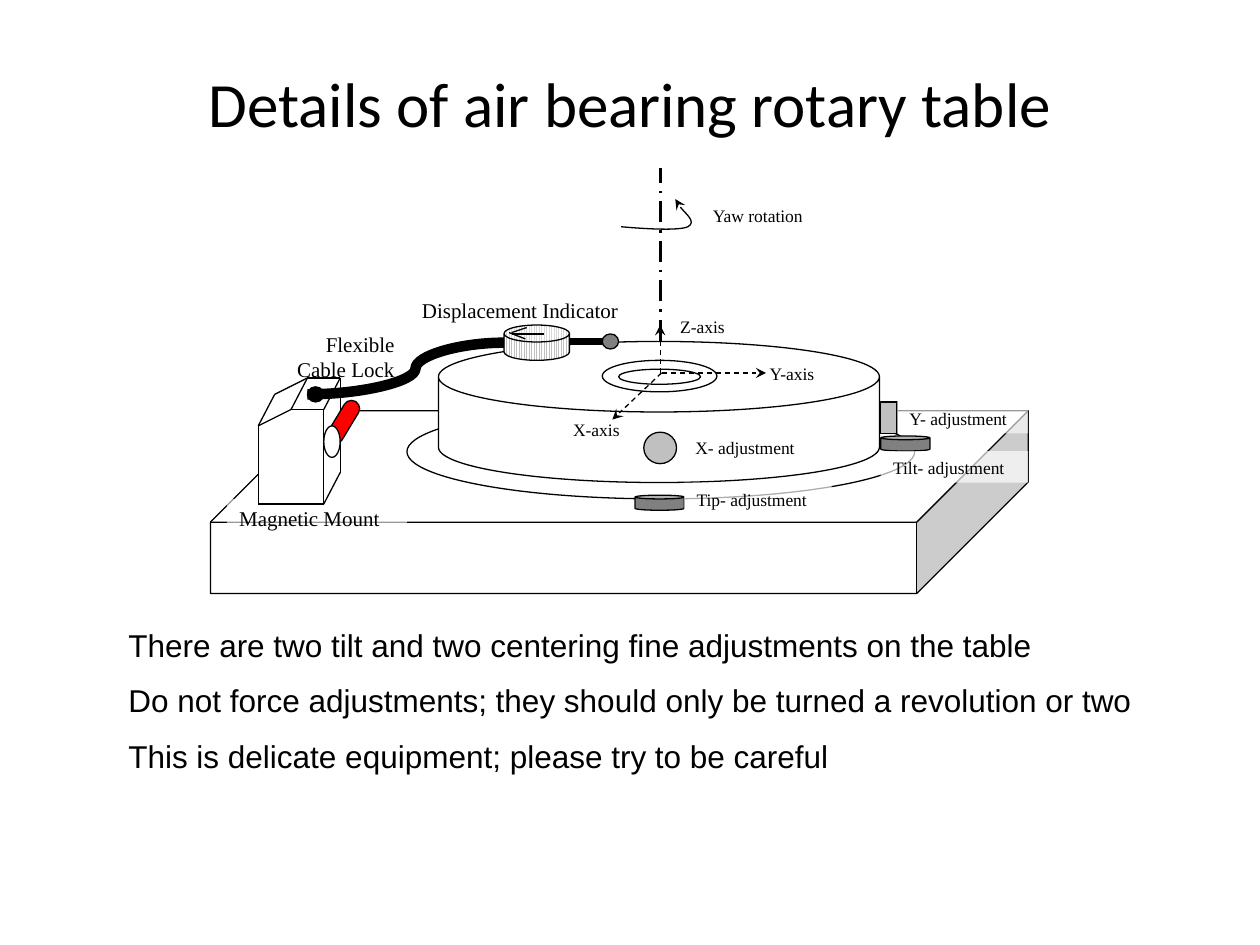
from itertools import pairwise
from lxml.etree import SubElement
from pptx import Presentation
from pptx.dml.color import RGBColor
from pptx.enum.dml import MSO_LINE, MSO_PATTERN
from pptx.enum.shapes import MSO_CONNECTOR, MSO_SHAPE
from pptx.enum.text import MSO_ANCHOR, PP_ALIGN
from pptx.oxml.ns import qn
from pptx.util import Inches, Pt

TITLE = "Details of air bearing rotary table"
NOTES = [
    "There are two tilt and two centering fine adjustments on the table",
    "Do not force adjustments; they should only be turned a revolution or two",
    "This is delicate equipment; please try to be careful",
]
BLACK, WHITE, SILVER, GRAY, RED = "000000", "FFFFFF", "C0C0C0", "808080", "FF0000"
CAN, OVAL, BOX = MSO_SHAPE.CAN, MSO_SHAPE.OVAL, MSO_SHAPE.RECTANGLE
AXIS = {"dash": MSO_LINE.DASH, "arrow": True}
CENTER = (5.25, 2.96)

TABLE = [
    ("line", [(5.24, 3.33), (5.24, 1.33)], {"weight": 1.5, "dash": MSO_LINE.LONG_DASH_DOT}),
    ("shape", MSO_SHAPE.CUBE, (1.67, 3.26, 6.49, 1.45), WHITE, {"adjustment": 0.61}),
    ("shape", OVAL, (3.23, 3.21, 4.03, 0.75), WHITE, {}),
    ("curve", [(4.93, 1.8), (5.16, 1.82), (5.39, 1.83), (5.46, 1.8),
               (5.53, 1.76), (5.36, 1.62), (5.36, 1.58)], {"arrow": True}),
    ("shape", CAN, (3.48, 2.71, 3.5, 1.12), WHITE, {"adjustment": 0.5}),
    ("shape", OVAL, (5.11, 3.43, 0.26, 0.25), SILVER, {}),
    ("label", "X- adjustment", (5.42, 3.42, 1.05, 0.25), {}),
    ("shape", BOX, (6.99, 3.19, 0.13, 0.25), SILVER, {}),
    ("label", "Y- adjustment", (7.12, 3.19, 1.04, 0.25), {"opacity": 60}),
    ("shape", CAN, (5.04, 3.93, 0.39, 0.12), GRAY, {}),
    ("label", "Tip- adjustment", (5.43, 3.83, 1.17, 0.25), {"opacity": 68}),
    ("shape", CAN, (6.99, 3.46, 0.39, 0.12), GRAY, {}),
    ("label", "Tilt- adjustment", (6.99, 3.58, 1.17, 0.25), {"opacity": 68}),
    ("shape", OVAL, (4.78, 2.86, 0.91, 0.25), WHITE, {}),
    ("shape", OVAL, (4.91, 2.93, 0.65, 0.12), WHITE, {}),
]
AXES = [
    ("line", [CENTER, (6.08, 2.96)], AXIS),
    ("label", "Y-axis", (6.01, 2.83, 0.78, 0.25), {}),
    ("line", [CENTER, (4.86, 3.33)], AXIS),
    ("label", "X-axis", (4.45, 3.28, 0.65, 0.25), {"align": PP_ALIGN.JUSTIFY}),
    ("line", [(5.24, 2.96), (5.24, 2.58)], AXIS),
    ("label", "Z-axis", (5.3, 2.46, 0.78, 0.25), {}),
    ("label", "Yaw rotation", (5.56, 1.58, 1.04, 0.25), {}),
]
INDICATOR = [
    ("shape", CAN, (4, 2.58, 0.52, 0.28), SILVER, {"adjustment": 0.48, "hatched": True}),
    ("line", [(4.32, 2.65), (4.06, 2.65)], {}),
    ("line", [(4.04, 2.64), (4.17, 2.69)], {}),
    ("line", [(4.06, 2.64), (4.18, 2.6)], {}),
    ("shape", BOX, (2.06, 3.08, 0.65, 0.88), WHITE, {"outline": WHITE}),
    ("line", [(2.44, 3.13), (4, 2.72)], {"weight": 6, "bend": 0.55}),
    ("shape", BOX, (4.52, 2.69, 0.26, 0.04), BLACK, {}),
    ("shape", OVAL, (4.78, 2.65, 0.13, 0.12), GRAY, {}),
    ("label", "Displacement Indicator", (3.25, 2.31, 1.82, 0.38), {"size": 12}),
    ("label", "Flexible Cable Lock", (2.06, 2.58, 1.17, 0.54),
     {"size": 12, "align": PP_ALIGN.RIGHT}),
]
MOUNT = [
    ("label", "Magnetic Mount", (1.8, 3.96, 1.43, 0.42), {"size": 12, "opacity": 60}),
    ("line", [(2.05, 3.38), (2.31, 3.25), (2.57, 3.25), (2.57, 4), (2.05, 4), (2.05, 3.38),
              (2.18, 3.13), (2.44, 3), (2.7, 3), (2.7, 3.75), (2.57, 4)], {}),
    ("line", [(2.31, 3.25), (2.44, 3)], {}),
    ("line", [(2.57, 3.25), (2.7, 3)], {}),
    ("shape", MSO_SHAPE.ROUNDED_RECTANGLE, (2.66, 3.16, 0.13, 0.38), RED,
     {"adjustment": 0.5, "rotation": 31.1}),
    ("shape", OVAL, (2.57, 3.38, 0.13, 0.25), WHITE, {}),
    ("shape", OVAL, (2.44, 3.07, 0.13, 0.12), BLACK, {}),
]


def color(value):
    return RGBColor.from_string(value)


def inches(values):
    return [Inches(value) for value in values]


def style_line(line, value=BLACK, weight=0.75, dash=None, arrow=False):
    line.color.rgb = color(value)
    line.width = Pt(weight)
    if dash:
        line.dash_style = dash
    if arrow:
        SubElement(line._get_or_add_ln(), qn("a:tailEnd"), type="stealth")


def add_paragraphs(shape, texts, font="Times New Roman", size=10,
                   align=PP_ALIGN.LEFT, anchor=MSO_ANCHOR.TOP, before=0):
    frame = shape.text_frame
    frame.word_wrap = True
    frame.vertical_anchor = anchor
    for index, text in enumerate(texts):
        paragraph = frame.add_paragraph() if index else frame.paragraphs[0]
        paragraph.alignment = align
        paragraph.space_before = Pt(before)
        run = paragraph.add_run()
        run.text = text
        run.font.name = font
        run.font.size = Pt(size)
        run.font.color.rgb = color(BLACK)


def add_shape(shapes, kind, box, fill, adjustment=None, rotation=0,
              outline=BLACK, hatched=False):
    shape = shapes.add_shape(kind, *inches(box))
    shape.shadow.inherit = False
    shape.rotation = rotation
    if adjustment is not None:
        shape.adjustments[0] = adjustment
    if hatched:
        shape.fill.patterned()
        shape.fill.pattern = MSO_PATTERN.LIGHT_VERTICAL
        shape.fill.fore_color.rgb = color(fill)
        shape.fill.back_color.rgb = color(WHITE)
    else:
        shape.fill.solid()
        shape.fill.fore_color.rgb = color(fill)
    style_line(shape.line, outline)
    return shape


def add_label(shapes, text, box, opacity=None, **text_format):
    if opacity is None:
        shape = shapes.add_textbox(*inches(box))
    else:
        shape = add_shape(shapes, BOX, box, WHITE)
        shape.line.fill.background()
        fill_color = next(shape._element.spPr.iter(qn("a:srgbClr")))
        SubElement(fill_color, qn("a:alpha"), val=str(opacity * 1000))
    add_paragraphs(shape, [text], **text_format)


def add_line(shapes, points, bend=None, **line_format):
    kind = MSO_CONNECTOR.STRAIGHT if bend is None else MSO_CONNECTOR.CURVE
    for start, end in pairwise(points):
        connector = shapes.add_connector(kind, *inches(start + end))
        style_line(connector.line, **line_format)
        properties = connector._element.spPr
        SubElement(properties, qn("a:effectLst"))
        if bend is not None:
            guides = next(properties.iter(qn("a:avLst")))
            SubElement(guides, qn("a:gd"), name="adj1", fmla=f"val {round(bend * 100000)}")


def add_curve(shapes, points, **line_format):
    start, *controls = [inches(point) for point in points]
    builder = shapes.build_freeform(*start)
    builder.add_line_segments(controls, close=False)
    shape = builder.convert_to_shape()
    shape.shadow.inherit = False
    shape.fill.background()
    style_line(shape.line, **line_format)
    outline = next(shape._element.iter(qn("a:path")))
    segments = outline.findall(qn("a:lnTo"))
    for first in range(0, len(segments), 3):
        cubic = SubElement(outline, qn("a:cubicBezTo"))
        for segment in segments[first:first + 3]:
            cubic.append(segment[0])
            outline.remove(segment)


def main():
    presentation = Presentation()
    presentation.slide_width = Inches(10)
    presentation.slide_height = Inches(7.5)
    slide = presentation.slides.add_slide(presentation.slide_layouts[6])
    title = slide.shapes.add_textbox(*inches((0.5, 0.3, 9, 1.03)))
    add_paragraphs(title, [TITLE], font="Calibri", size=36,
                   align=PP_ALIGN.CENTER, anchor=MSO_ANCHOR.MIDDLE)
    drawing = slide.shapes.add_group_shape().shapes
    makers = {"shape": add_shape, "label": add_label, "line": add_line, "curve": add_curve}
    for kind, *content, options in TABLE + AXES + INDICATOR + MOUNT:
        makers[kind](drawing, *content, **options)
    notes = slide.shapes.add_textbox(*inches((0.92, 4.92, 8.25, 1.3)))
    add_paragraphs(notes, NOTES, font="Arial", size=18, before=10)
    presentation.save("out.pptx")


if __name__ == "__main__":
    main()
